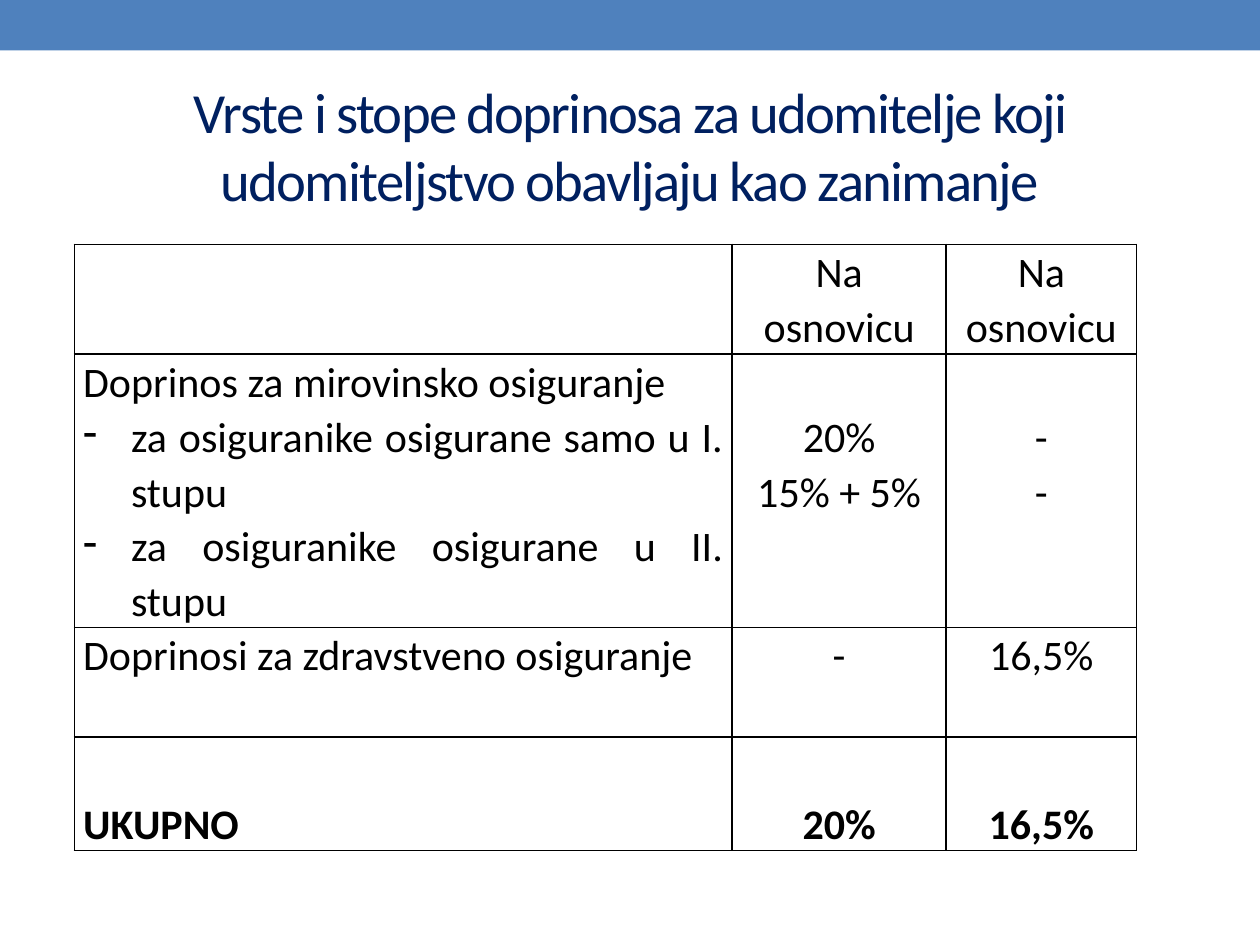
from lxml.etree import SubElement
from pptx import Presentation
from pptx.dml.color import RGBColor
from pptx.enum.shapes import MSO_SHAPE as Shape
from pptx.enum.text import MSO_ANCHOR as Anchor, PP_ALIGN as Align
from pptx.oxml.ns import qn
from pptx.util import Inches, Pt

FONT = "Calibri"
BLUE, NAVY, BLACK = "4F81BD", "002060", "000000"
LINE_HEIGHT = 0.435
BULLET_INDENT = Inches(0.38)


def color(value):
    return RGBColor.from_string(value)


def write(para, text, size=24, ink=BLACK, bold=False, align=Align.LEFT,
          line_spacing=None, tracking=None, bullet=None):
    """Fill a paragraph with one formatted run."""
    if bullet:
        props = para._p.get_or_add_pPr()
        props.set("marL", str(BULLET_INDENT))
        props.set("indent", str(-BULLET_INDENT))
        SubElement(props, qn("a:buChar"), char=bullet)
    para.alignment = align
    if line_spacing:
        para.line_spacing = line_spacing
    span = para.add_run()
    span.text = text
    font = span.font
    font.name, font.size, font.bold = FONT, Pt(size), bold
    font.color.rgb = color(ink)
    if tracking:
        span._r.get_or_add_rPr().set("spc", str(int(tracking * 100)))


def add_borders(cell, ink=BLACK, width=1):
    props = cell._tc.get_or_add_tcPr()
    for side in ("lnL", "lnR", "lnT", "lnB"):
        line = SubElement(props, qn(f"a:{side}"), w=str(Pt(width)))
        fill = SubElement(line, qn("a:solidFill"))
        SubElement(fill, qn("a:srgbClr"), val=ink)


class SlideBuilder:
    def __init__(self, page):
        self.page = page

    def band(self, left, top, width, height, fill):
        shape = self.page.shapes.add_shape(
            Shape.RECTANGLE, *map(Inches, (left, top, width, height)))
        shape.shadow.inherit = False
        shape.fill.solid()
        shape.fill.fore_color.rgb = color(fill)
        shape.line.fill.background()

    def title(self, text, left, top, width, height):
        box = self.page.shapes.add_textbox(
            *map(Inches, (left, top, width, height)))
        frame = box.text_frame
        frame.word_wrap = True
        frame.vertical_anchor = Anchor.MIDDLE
        write(frame.paragraphs[0], text, size=32.4, ink=NAVY,
              align=Align.CENTER, tracking=-1)

    def table(self, rows, left, top, widths, heights):
        frame = self.page.shapes.add_table(
            len(heights), len(widths),
            *map(Inches, (left, top, sum(widths), sum(heights))))
        table = frame.table
        table.first_row = table.horz_banding = False
        for column, width in zip(table.columns, widths):
            column.width = Inches(width)
        for row, height in zip(table.rows, heights):
            row.height = Inches(height)
        for r, row in enumerate(rows):
            for c, lines in enumerate(row):
                self.cell(table.cell(r, c), lines, centered=c > 0,
                          total=r == len(rows) - 1)

    def cell(self, cell, lines, centered, total):
        """Write the lines of a cell; a leading "- " makes a bullet."""
        add_borders(cell)
        cell.fill.background()
        cell.margin_left = cell.margin_right = Inches(0.07)
        cell.margin_bottom = 0
        # Stacked figures start one line down, level with the first bullet.
        stacked = centered and len(lines) > 1
        cell.margin_top = Inches(LINE_HEIGHT if stacked else 0)
        cell.vertical_anchor = Anchor.BOTTOM if total else Anchor.TOP
        frame = cell.text_frame
        for i, text in enumerate(lines):
            para = frame.add_paragraph() if i else frame.paragraphs[0]
            bullet = "-" if text.startswith("- ") else None
            align = (Align.CENTER if centered
                     else Align.JUSTIFY if bullet else Align.LEFT)
            write(para, text.removeprefix("- "), bold=total, align=align,
                  line_spacing=None if total else 1.07, bullet=bullet)


def main():
    deck = Presentation()
    deck.slide_width, deck.slide_height = Inches(10), Inches(7.5)
    builder = SlideBuilder(deck.slides.add_slide(deck.slide_layouts[6]))
    builder.band(0, 0, 10, 0.4, BLUE)
    builder.title("Vrste i stope doprinosa za udomitelje koji "
                  "udomiteljstvo obavljaju kao zanimanje", 0.5, 0.55, 9, 1.2)
    rates = [
        [[], ["Na osnovicu"], ["Na osnovicu"]],
        [["Doprinos za mirovinsko osiguranje",
          "- za osiguranike osigurane samo u I. stupu",
          "- za osiguranike osigurane u II. stupu"],
         ["20%", "15% + 5%"], ["-", "-"]],
        [["Doprinosi za zdravstveno osiguranje"], ["-"], ["16,5%"]],
        [["UKUPNO"], ["20%"], ["16,5%"]],
    ]
    builder.table(rates, 0.59, 1.94, widths=[5.22, 1.7, 1.51],
                  heights=[0.87, 2.17, 0.87, 0.9])
    deck.save("out.pptx")


if __name__ == "__main__":
    main()
